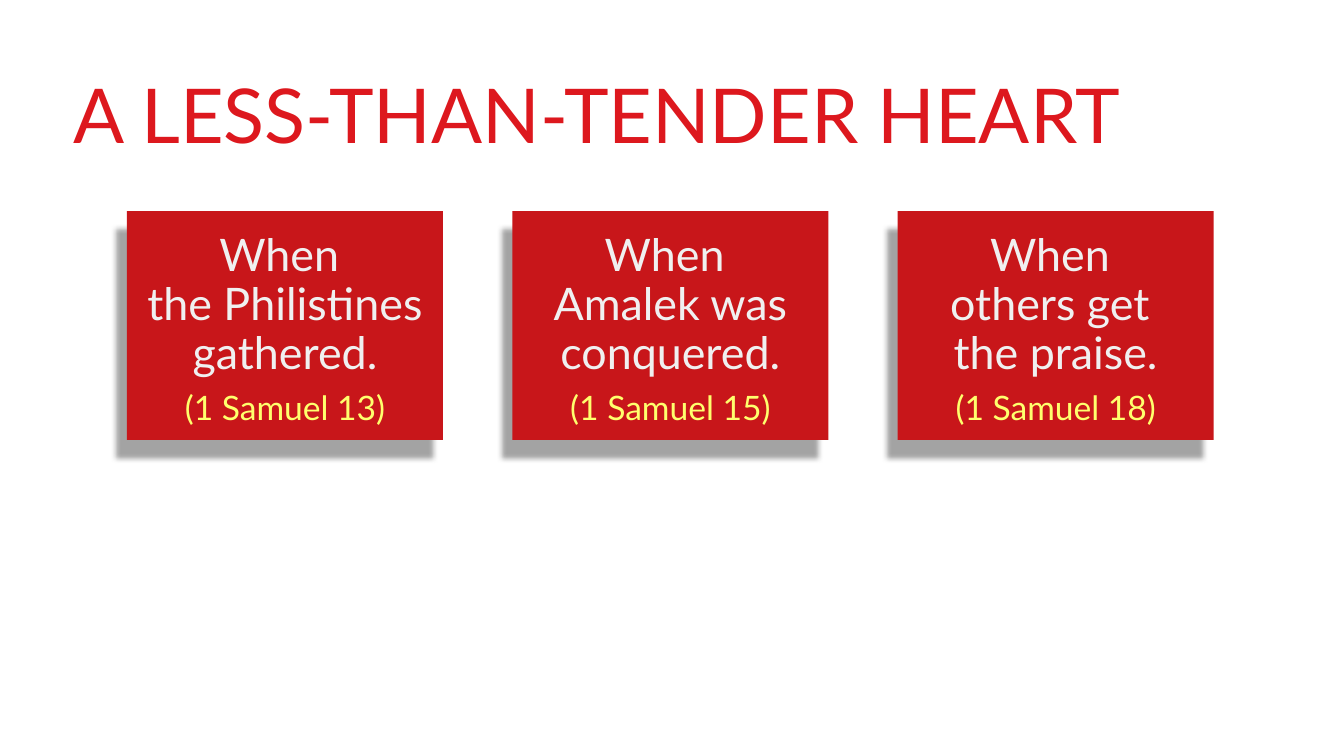
import lxml.etree
import pptx
import pptx.dml.color
import pptx.enum.shapes
import pptx.enum.text
import pptx.oxml.ns
import pptx.util

PX = 9525
FONT = "Lato"
COLOURS = {
    "title": "DD181E",
    "card": "C8161A",
    "body": "F0F0F0",
    "verse": "FFFF6D",
    "shadow": "595959",
}
CARDS = [
    ("When \nthe Philistines gathered.", "(1 Samuel 13)"),
    ("When \nAmalek was conquered.", "(1 Samuel 15)"),
    ("When \nothers get \nthe praise.", "(1 Samuel 18)"),
]


def colour(name):
    """Return the named colour."""
    return pptx.dml.color.RGBColor.from_string(COLOURS[name])


def write(para, text, *, size, fill, align, spacing=None):
    """Write formatted text into a paragraph."""
    para.text = text
    para.alignment = align
    if spacing:
        para.line_spacing = pptx.util.Pt(spacing)
    for span in para.runs:
        span.font.name = FONT
        span.font.size = pptx.util.Pt(size)
        span.font.color.rgb = colour(fill)


def set_insets(frame, left, top, right, bottom):
    """Set the text margins of a frame in px."""
    frame.margin_left, frame.margin_top = left * PX, top * PX
    frame.margin_right, frame.margin_bottom = right * PX, bottom * PX


def cast_shadow(shape):
    """Give a shape a soft shadow down and to the left."""
    shape.shadow.inherit = False
    effects = shape._element.spPr.find(pptx.oxml.ns.qn("a:effectLst"))
    shadow = lxml.etree.SubElement(
        effects, pptx.oxml.ns.qn("a:outerShdw"),
        blurRad=str(pptx.util.Pt(4)), dist=str(pptx.util.Pt(15)),
        dir=str(120 * 60000), algn="ctr", rotWithShape="0")
    tint = lxml.etree.SubElement(
        shadow, pptx.oxml.ns.qn("a:srgbClr"), val=COLOURS["shadow"])
    lxml.etree.SubElement(tint, pptx.oxml.ns.qn("a:alpha"), val="55000")


def place_title(page, text, left, top, width, height):
    """Place the slide title in its box."""
    title = page.shapes.title
    title.left, title.top = left * PX, top * PX
    title.width, title.height = width * PX, height * PX
    frame = title.text_frame
    frame.word_wrap = True
    frame.auto_size = pptx.enum.text.MSO_AUTO_SIZE.NONE
    frame.vertical_anchor = pptx.enum.text.MSO_ANCHOR.TOP
    set_insets(frame, 10, 5, 10, 5)
    write(frame.paragraphs[0], text, size=54, fill="title",
          align=pptx.enum.text.PP_ALIGN.LEFT)


def place_card(page, body, verse, left, top, width, height):
    """Place one card with its statement and Bible reference."""
    card = page.shapes.add_shape(
        pptx.enum.shapes.MSO_SHAPE.RECTANGLE,
        left * PX, top * PX, width * PX, height * PX)
    card.fill.solid()
    card.fill.fore_color.rgb = colour("card")
    card.line.fill.background()
    cast_shadow(card)
    frame = card.text_frame
    frame.word_wrap = True
    frame.vertical_anchor = pptx.enum.text.MSO_ANCHOR.TOP
    set_insets(frame, 10, 19, 10, 5)
    centre = pptx.enum.text.PP_ALIGN.CENTER
    write(frame.paragraphs[0], body, size=32, fill="body",
          align=centre, spacing=35)
    write(frame.add_paragraph(), verse, size=24, fill="verse",
          align=centre, spacing=35)


def place_cards(page, cards, left, top, width, height, gap):
    """Place a row of equal cards across the given width."""
    card_width = (width - gap * (len(cards) - 1)) // len(cards)
    for index, (body, verse) in enumerate(cards):
        place_card(page, body, verse, left + index * (card_width + gap),
                   top, card_width, height)


def main():
    """Build and save the deck."""
    deck = pptx.Presentation()
    deck.slide_width, deck.slide_height = 1280 * PX, 720 * PX
    page = deck.slides.add_slide(deck.slide_layouts.get_by_name("Title Only"))
    place_title(page, "A LESS-THAN-TENDER HEART", 60, 60, 1180, 97)
    place_cards(page, CARDS, 121, 201, 1035, 218, gap=66)
    deck.save("out.pptx")


if __name__ == "__main__":
    main()
